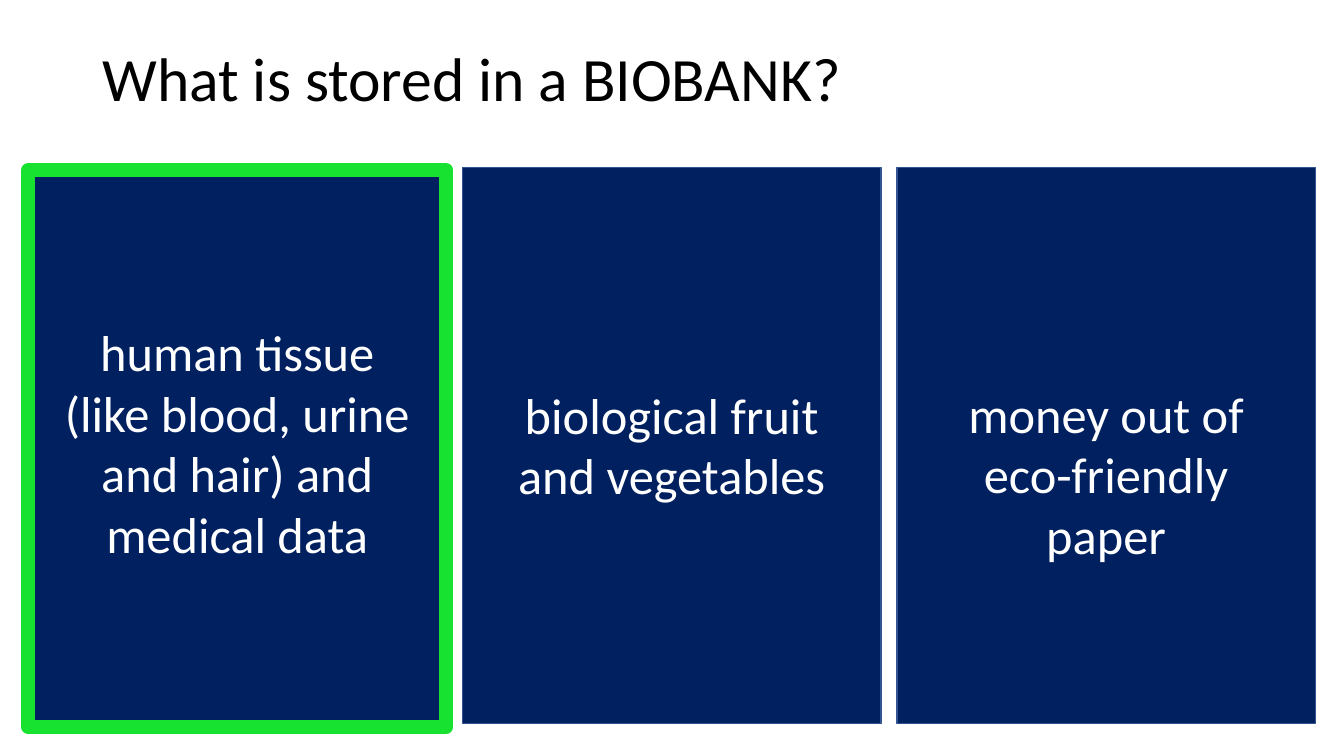
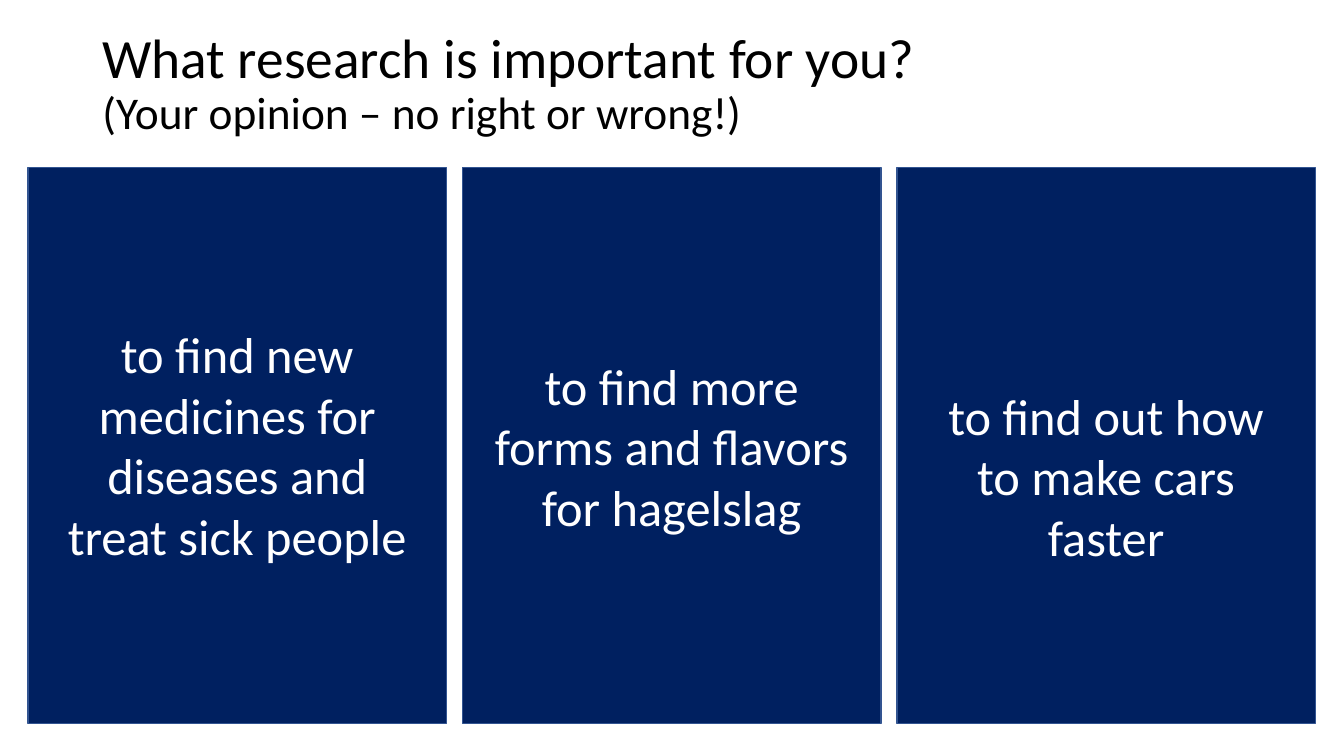
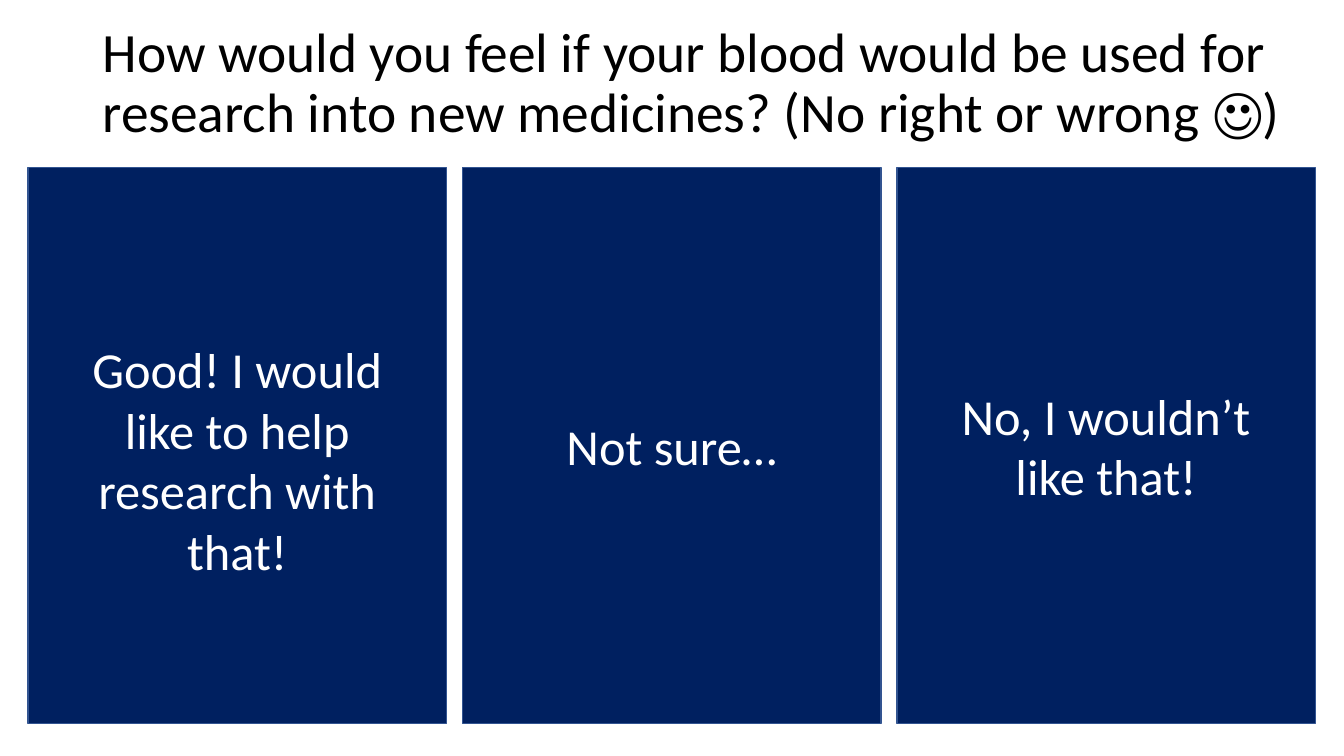
from dataclasses import dataclass

from lxml.etree import SubElement
from pptx import Presentation
from pptx.dml.color import RGBColor
from pptx.enum.shapes import MSO_SHAPE
from pptx.enum.text import MSO_ANCHOR, MSO_AUTO_SIZE, PP_ALIGN
from pptx.oxml.ns import qn
from pptx.util import Pt


@dataclass(frozen=True)
class Theme:
    """Colours, font and type sizes shared by all slides."""
    font: str = "Calibri"
    ink: RGBColor = RGBColor(0x00, 0x00, 0x00)
    card: RGBColor = RGBColor(0x00, 0x20, 0x60)
    card_text: RGBColor = RGBColor(0xFF, 0xFF, 0xFF)
    card_line: RGBColor = RGBColor(0x32, 0x54, 0x91)
    correct_line: RGBColor = RGBColor(0x18, 0xE2, 0x30)
    title_size: float = 44
    long_title_size: float = 39.6
    subtitle_size: float = 32.4
    answer_size: float = 36
    line_width: float = 1
    correct_width: float = 10


@dataclass(frozen=True)
class Box:
    """A rectangle in points."""
    left: float
    top: float
    width: float
    height: float

    def place(self, shape):
        """Move and size a shape to this box."""
        shape.left, shape.top = Pt(self.left), Pt(self.top)
        shape.width, shape.height = Pt(self.width), Pt(self.height)

    def lengths(self):
        """Return the four lengths for a new shape."""
        return Pt(self.left), Pt(self.top), Pt(self.width), Pt(self.height)


@dataclass(frozen=True)
class Answer:
    """An answer, with its text offset from the top of the card."""
    text: str
    offset: float
    height: float
    correct: bool = False


THEME = Theme()
CARDS = Box(20.1, 119.5, 919.4, 397.4)
CARD_GAP = 11.5
CARD_PADDING = 12.2
CORRECT_DROP = 2.2


def write_text(paragraph, text, *, size, color, align=PP_ALIGN.LEFT, spacing=None, new_line=False):
    """Add formatted text to a paragraph, on a new line if asked."""
    if new_line:
        paragraph.add_line_break()
        SubElement(paragraph._p[-1], qn("a:rPr"), sz=str(round(size * 100)))
    paragraph.alignment = align
    paragraph.line_spacing = spacing
    run = paragraph.add_run()
    run.text = text
    run.font.name = THEME.font
    run.font.size = Pt(size)
    run.font.color.rgb = color


def add_title(slide, box, lines):
    """Place the title and write its lines, each with its size."""
    title = slide.shapes.title
    box.place(title)
    frame = title.text_frame
    frame.word_wrap = True
    frame.auto_size = MSO_AUTO_SIZE.NONE
    frame.vertical_anchor = MSO_ANCHOR.MIDDLE
    for index, (text, size) in enumerate(lines):
        write_text(frame.paragraphs[0], text, size=size, color=THEME.ink,
                   spacing=0.9, new_line=index > 0)


def add_card(slide, box, answer):
    """Draw one answer card and its text."""
    drop = CORRECT_DROP if answer.correct else 0
    card_box = Box(box.left, box.top + drop, box.width, box.height)
    card = slide.shapes.add_shape(MSO_SHAPE.RECTANGLE, *card_box.lengths())
    card.shadow.inherit = False
    card.fill.solid()
    card.fill.fore_color.rgb = THEME.card
    card.line.color.rgb = THEME.correct_line if answer.correct else THEME.card_line
    card.line.width = Pt(THEME.correct_width if answer.correct else THEME.line_width)

    text_box = Box(box.left + CARD_PADDING, box.top + answer.offset,
                   box.width - 2 * CARD_PADDING, answer.height)
    label = slide.shapes.add_textbox(*text_box.lengths())
    frame = label.text_frame
    frame.word_wrap = True
    frame.auto_size = MSO_AUTO_SIZE.SHAPE_TO_FIT_TEXT
    write_text(frame.paragraphs[0], answer.text, size=THEME.answer_size,
               color=THEME.card_text, align=PP_ALIGN.CENTER)


def add_cards(slide, box, answers):
    """Share a box equally between the answer cards."""
    width = (box.width - CARD_GAP * (len(answers) - 1)) / len(answers)
    for index, answer in enumerate(answers):
        left = box.left + index * (width + CARD_GAP)
        add_card(slide, Box(left, box.top, width, box.height), answer)


def add_question(presentation, title_box, lines, answers):
    """Add a slide with a question and its answers."""
    slide = presentation.slides.add_slide(presentation.slide_layouts.get_by_name("Title Only"))
    add_title(slide, title_box, lines)
    add_cards(slide, CARDS, answers)


def main():
    """Build and save the quiz."""
    presentation = Presentation()
    presentation.slide_width, presentation.slide_height = Pt(960), Pt(540)
    add_question(
        presentation, Box(66, 28.8, 828, 59),
        [("What is stored in a BIOBANK?", THEME.title_size)],
        [Answer("human tissue (like blood, urine and hair) and medical data", 106.6, 216, True),
         Answer("biological fruit and vegetables", 151.2, 128.2),
         Answer("money out of eco-friendly paper", 150.5, 172)])
    add_question(
        presentation, Box(66, 31, 828, 59),
        [("What research is important for you?", THEME.long_title_size),
         ("(Your opinion – no right or wrong!)", THEME.subtitle_size)],
        [Answer("to find new medicines for diseases and treat sick people", 108, 181.4),
         Answer("to find more forms and flavors for hagelslag", 130.3, 138.2),
         Answer("to find out how to make cars faster", 151.9, 138.2)])
    add_question(
        presentation, Box(66, 31, 873.4, 59),
        [("How would you feel if your blood would be used for research into new medicines? "
          "(No right or wrong ☺)", THEME.long_title_size)],
        [Answer("Good! I would like to help research with that!", 118.8, 181.4),
         Answer("Not sure…", 173.5, 51.1),
         Answer("No, I wouldn’t like that!", 151.9, 94.3)])
    presentation.save("out.pptx")


if __name__ == "__main__":
    main()
